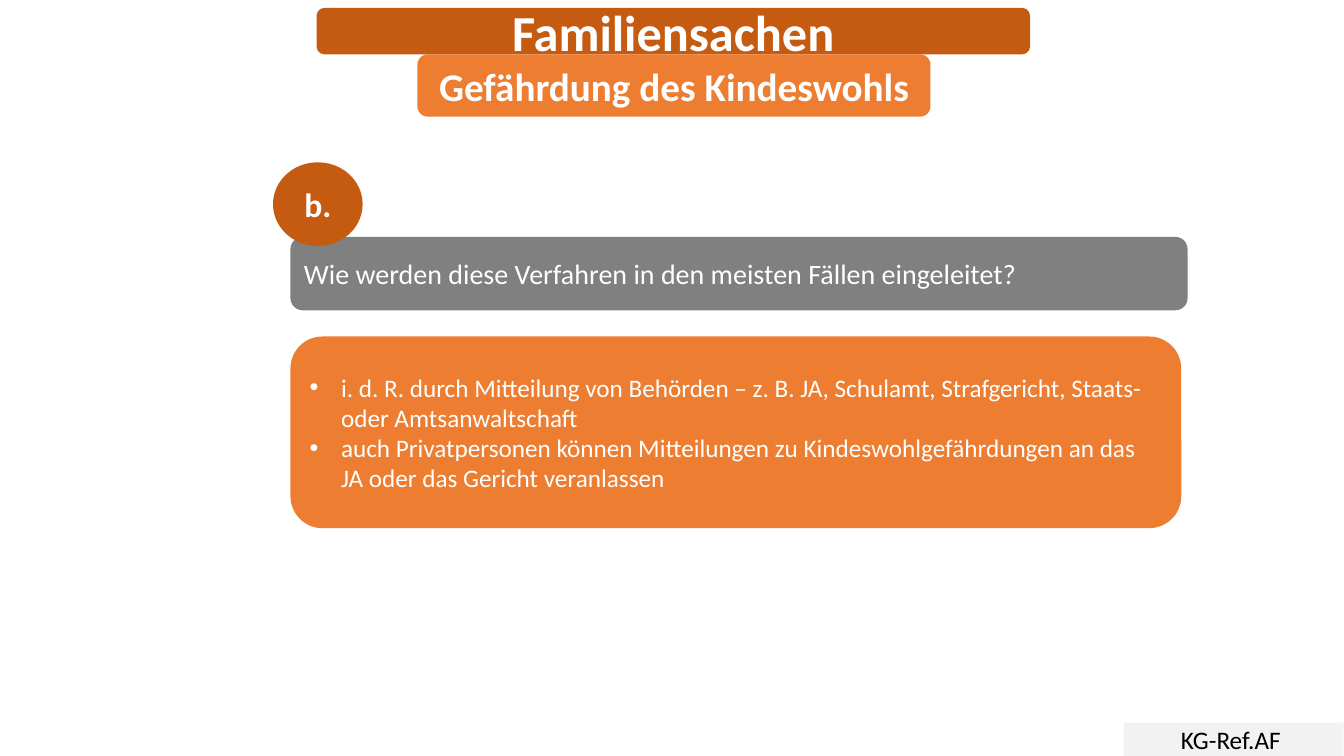
import pptx
import pptx.util
import pptx.dml.color
import pptx.enum.shapes
import pptx.enum.text
import lxml.etree

Cm = pptx.util.Cm
RGBColor = pptx.dml.color.RGBColor
SHAPE = pptx.enum.shapes.MSO_SHAPE
ALIGN = pptx.enum.text.PP_ALIGN

DARK_ORANGE = RGBColor(0xC5, 0x5A, 0x11)
ORANGE = RGBColor(0xED, 0x7D, 0x31)
GRAY = RGBColor(0x80, 0x80, 0x80)
LIGHT_GRAY = RGBColor(0xF2, 0xF2, 0xF2)
WHITE = RGBColor(0xFF, 0xFF, 0xFF)
BLACK = RGBColor(0x00, 0x00, 0x00)

# Content
TITLE = ["Familiensachen"]
TOPIC = ["Gefährdung des Kindeswohls"]
LETTER = ["b."]
QUESTION = ["Wie werden diese Verfahren in den meisten Fällen eingeleitet?"]
ANSWERS = [
    "i. d. R. durch Mitteilung von Behörden – z. B. JA, Schulamt, Strafgericht, "
    "Staats- oder Amtsanwaltschaft",
    "auch Privatpersonen können Mitteilungen zu Kindeswohlgefährdungen an das JA "
    "oder das Gericht veranlassen",
]
FOOTER = ["KG-Ref.AF "]

# Boxes from back to front: lines, preset, (left, top, width, height) in cm,
# fill, text colour, size, bold, alignment, bulleted
BOXES = [
    (TITLE, SHAPE.ROUNDED_RECTANGLE, (7.98, 0.2, 17.98, 1.17),
     DARK_ORANGE, WHITE, 36, True, ALIGN.CENTER, False),
    (QUESTION, SHAPE.ROUNDED_RECTANGLE, (7.32, 5.97, 22.61, 1.85),
     GRAY, WHITE, 20, False, ALIGN.LEFT, False),
    (LETTER, SHAPE.FLOWCHART_CONNECTOR, (6.88, 4.09, 2.26, 2.11),
     DARK_ORANGE, WHITE, 24, True, ALIGN.CENTER, False),
    (ANSWERS, SHAPE.ROUNDED_RECTANGLE, (7.32, 8.48, 22.45, 4.83),
     ORANGE, WHITE, 18, False, ALIGN.LEFT, True),
    (TOPIC, SHAPE.ROUNDED_RECTANGLE, (10.52, 1.37, 12.93, 1.57),
     ORANGE, WHITE, 28, True, ALIGN.CENTER, False),
    (FOOTER, SHAPE.RECTANGLE, (28.32, 18.21, 5.54, 0.84),
     LIGHT_GRAY, BLACK, 18, False, ALIGN.CENTER, False),
]
BULLET_INDENT = Cm(0.79)


def add_bullet(paragraph):
    properties = paragraph._p.get_or_add_pPr()
    properties.set("marL", str(BULLET_INDENT))
    properties.set("indent", str(-BULLET_INDENT))
    namespace = properties.nsmap["a"]
    font = lxml.etree.SubElement(properties, f"{{{namespace}}}buFont")
    font.set("typeface", "Arial")
    bullet = lxml.etree.SubElement(properties, f"{{{namespace}}}buChar")
    bullet.set("char", "•")


def add_box(slide, lines, preset, place, fill, color, size, bold, alignment, bulleted):
    shape = slide.shapes.add_shape(preset, *map(Cm, place))
    shape.shadow.inherit = False
    shape.fill.solid()
    shape.fill.fore_color.rgb = fill
    shape.line.fill.background()
    frame = shape.text_frame
    frame.word_wrap = True
    frame.vertical_anchor = pptx.enum.text.MSO_ANCHOR.MIDDLE
    for index, line in enumerate(lines):
        paragraph = frame.add_paragraph() if index else frame.paragraphs[0]
        paragraph.text = line
        paragraph.alignment = alignment
        paragraph.font.name = "Calibri"
        paragraph.font.size = pptx.util.Pt(size)
        paragraph.font.bold = bold
        paragraph.font.color.rgb = color
        if bulleted:
            add_bullet(paragraph)


def main():
    presentation = pptx.Presentation()
    presentation.slide_width = Cm(33.87)
    presentation.slide_height = Cm(19.05)
    slide = presentation.slides.add_slide(presentation.slide_layouts[6])
    for box in BOXES:
        add_box(slide, *box)
    presentation.save("out.pptx")


if __name__ == "__main__":
    main()
